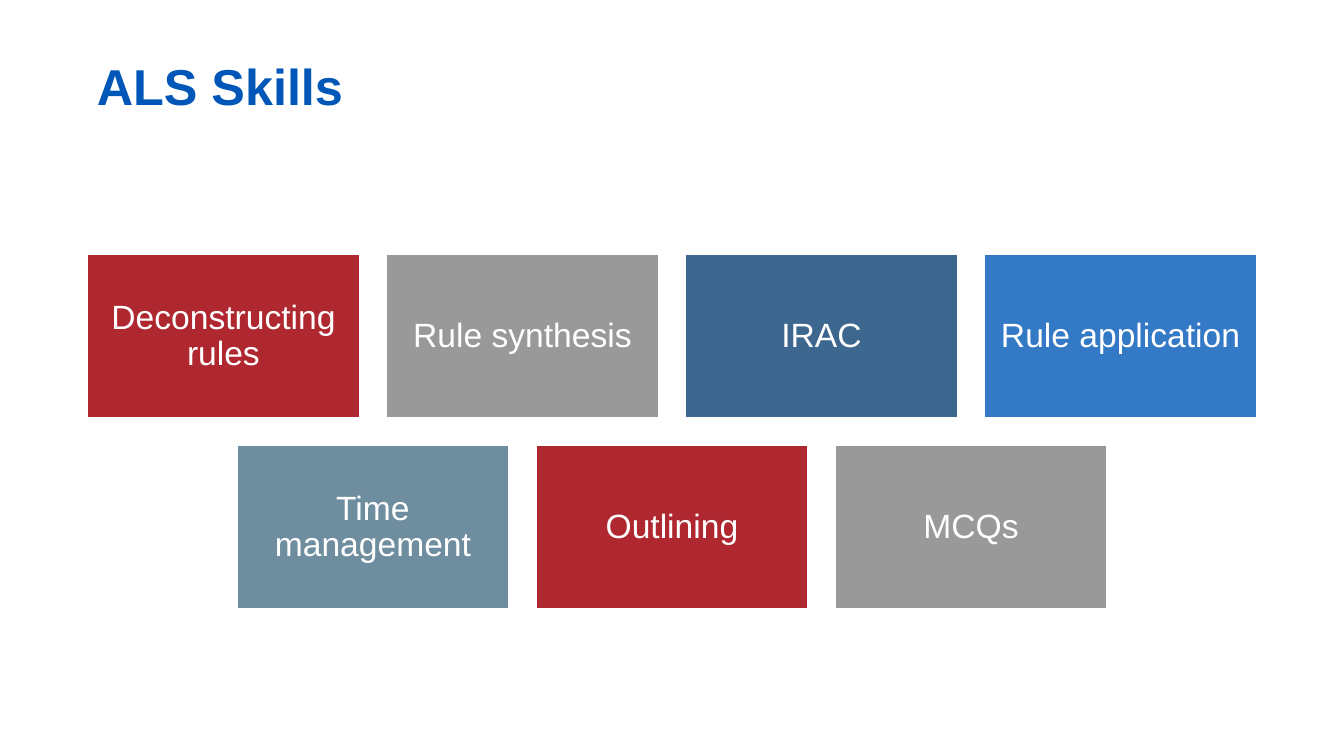
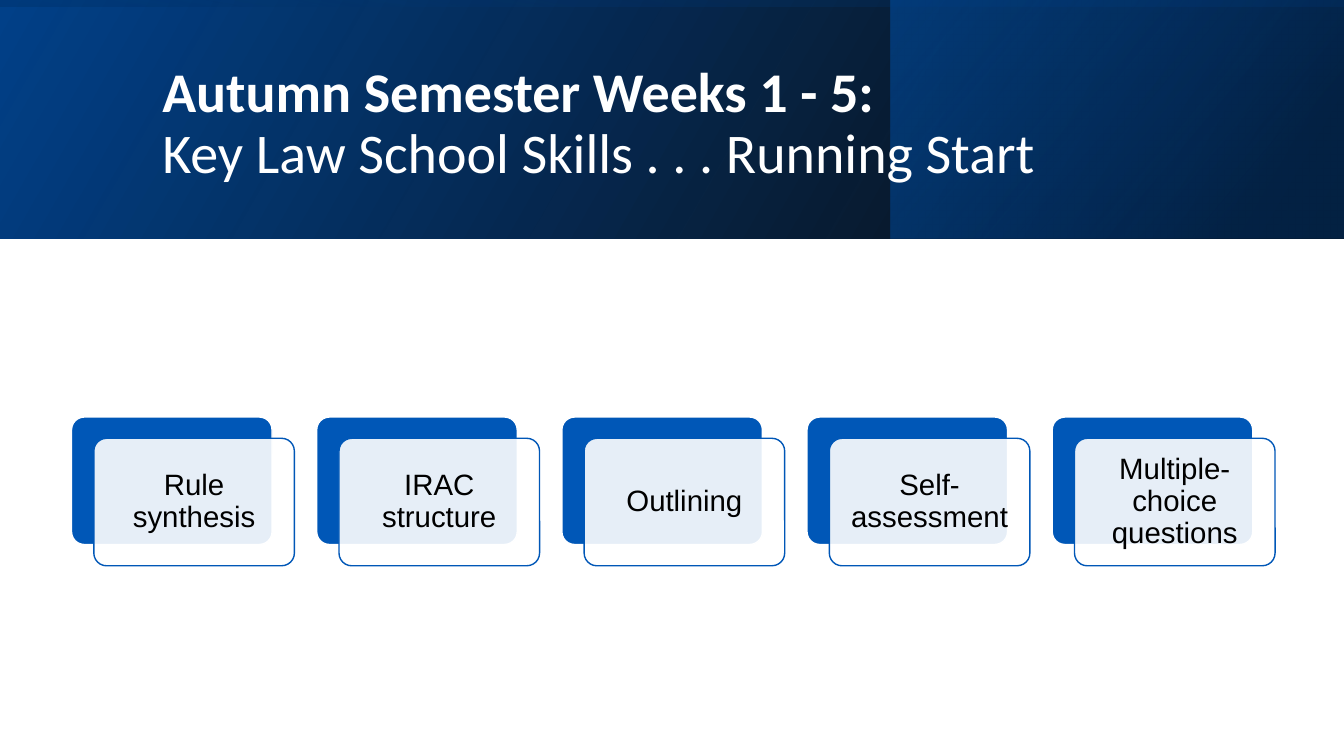
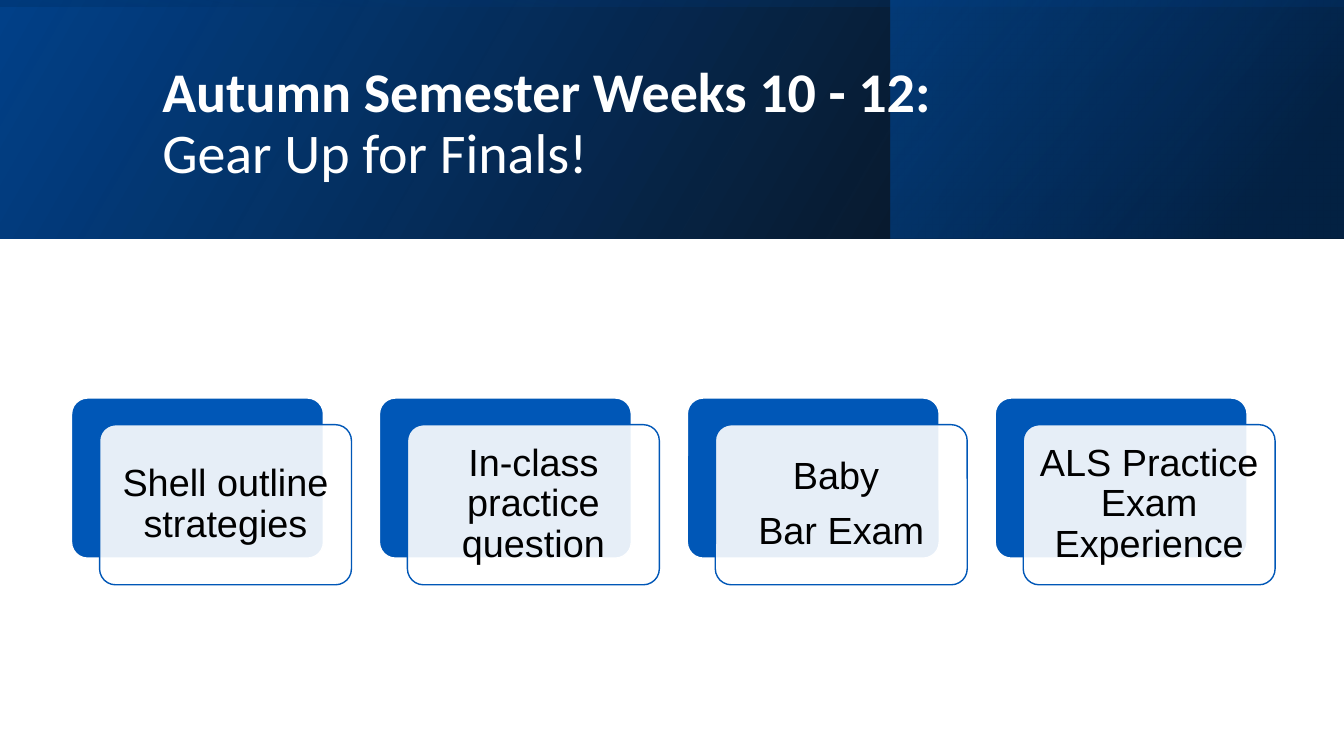
from lxml.etree import SubElement
from pptx import Presentation
from pptx.dml.color import RGBColor
from pptx.enum.shapes import MSO_SHAPE
from pptx.enum.text import MSO_ANCHOR, MSO_AUTO_SIZE, PP_ALIGN
from pptx.oxml.ns import qn
from pptx.util import Inches, Pt

COLORS = {
    "white": "FFFFFF", "black": "000000", "blue": "0057B7", "navy": "004189",
    "deep": "002B5C", "red": "AF272F", "gray": "999999", "steel": "3E6790",
    "sky": "3379C5", "slate": "6E8D9E",
}


def rgb(name):
    return RGBColor.from_string(COLORS[name])


class Deck:
    """Style and current slide; lengths are percent of slide width and height."""
    body_font, band_font = "Arial", "Calibri"
    band_height = 31.6

    def __init__(self):
        self.prs = Presentation()
        self.prs.slide_width, self.prs.slide_height = Inches(13.333), Inches(7.5)

    def new_slide(self):
        self.s = self.prs.slides.add_slide(self.prs.slide_layouts[5])

    def box(self, left, top, width, height):
        w, h = self.prs.slide_width / 100, self.prs.slide_height / 100
        return int(left * w), int(top * h), int(width * w), int(height * h)

    def shape(self, kind, box, line=None):
        sp = self.s.shapes.add_shape(kind, *self.box(*box))
        sp.shadow.inherit = False
        if line:
            sp.line.color.rgb, sp.line.width = rgb(line), Pt(1)
        else:
            sp.line.fill.background()
        return sp

    def set_alpha(self, sp, *percents):
        """Make the fill's colours, in order, this opaque."""
        for clr, percent in zip(sp.element.spPr.iter(qn("a:srgbClr")), percents):
            SubElement(clr, qn("a:alpha")).set("val", str(percent * 1000))

    def label(self, sp, text, size, color):
        tf = sp.text_frame
        tf.word_wrap, tf.vertical_anchor = True, MSO_ANCHOR.MIDDLE
        tf.margin_left = tf.margin_right = tf.margin_top = tf.margin_bottom = Pt(size * 0.3)
        tf.text = text
        for p in tf.paragraphs:
            p.alignment, p.line_spacing, p.space_after = PP_ALIGN.CENTER, 0.9, Pt(size * 0.35)
            p.font.size, p.font.name, p.font.color.rgb = Pt(size), self.body_font, rgb(color)

    def title(self, box, lines, size, font, color, anchor):
        """First line is bold, the others are regular."""
        sp = self.s.shapes.title
        sp.left, sp.top, sp.width, sp.height = self.box(*box)
        tf = sp.text_frame
        tf.word_wrap, tf.auto_size, tf.vertical_anchor = True, MSO_AUTO_SIZE.NONE, anchor
        p = tf.paragraphs[0]
        p.alignment, p.line_spacing = PP_ALIGN.LEFT, 0.9
        p.font.size, p.font.name, p.font.color.rgb = Pt(size), font, rgb(color)
        for i, line in enumerate(lines):
            if i:
                p.add_line_break()
            r = p.add_run()
            r.text, r.font.bold = line, i == 0
        sp.element.getparent().append(sp.element)  # in front of the band

    def panel(self, left, angle, stops, turned=False):
        """Mirrored gradient panel from left to the slide's right edge."""
        sp = self.shape(MSO_SHAPE.RECTANGLE, (left, 0, 100 - left, self.band_height))
        if turned:
            shift = (sp.width - sp.height) // 2
            sp.left, sp.top = sp.left + shift, sp.top - shift
            sp.width, sp.height = sp.height, sp.width
            sp.rotation = 270
        sp.element.spPr.find(qn("a:xfrm")).set("flipH", "1")
        sp.fill.gradient()
        sp.fill.gradient_angle = 360 - angle
        for stop, (position, color, _) in zip(sp.fill.gradient_stops, stops):
            stop.position, stop.color.rgb = position, rgb(color)
        self.set_alpha(sp, *(alpha for _, _, alpha in stops))

    def band(self, *lines):
        self.panel(0, 330, [(0, "black", 96), (1, "navy", 100)])
        self.panel(66.3, 320, [(0.19, "deep", 68), (1, "blue", 48)])
        self.panel(0, 350, [(0.23, "navy", 16), (0.99, "black", 45)], turned=True)
        self.title((11.33, 5.07, 79.73, 22.93), lines, 40, self.band_font, "white",
                   MSO_ANCHOR.MIDDLE)

    def tiles(self, top, rows, size=24):
        """Centred rows of (text, colour) tiles."""
        width, height, gap_x, gap_y = 20.25, 21.6, 2, 3.65
        for row, tiles in enumerate(rows):
            left = (100 - len(tiles) * (width + gap_x) + gap_x) / 2
            for col, (text, color) in enumerate(tiles):
                sp = self.shape(MSO_SHAPE.RECTANGLE,
                                (left + col * (width + gap_x), top + row * (height + gap_y),
                                 width, height), "white")
                sp.fill.solid()
                sp.fill.fore_color.rgb = rgb(color)
                self.label(sp, text, size, "white")

    def cards(self, texts, size, span=89.55, middle=65):
        """One row of blue cards, each with a translucent card shifted over it."""
        width = span * 9 / (11 * len(texts) - 1)
        height = width * 1.13
        dx, dy = width / 9, height / 6
        left, top = (100 - span) / 2 + 0.1, middle - (height + dy) / 2
        for i, text in enumerate(texts):
            x = left + i * (width + 2 * dx)
            back = self.shape(MSO_SHAPE.ROUNDED_RECTANGLE, (x, top, width, height), "white")
            front = self.shape(MSO_SHAPE.ROUNDED_RECTANGLE,
                               (x + dx, top + dy, width, height), "blue")
            for sp, color in ((back, "blue"), (front, "white")):
                sp.adjustments[0] = 0.1
                sp.fill.solid()
                sp.fill.fore_color.rgb = rgb(color)
            self.set_alpha(front, 90)
            self.label(front, text, size, "black")


def main():
    deck = Deck()

    deck.new_slide()
    deck.title((6.45, 7.47, 87.1, 14.5), ["ALS Skills"], 36, deck.body_font, "blue",
               MSO_ANCHOR.TOP)
    deck.tiles(33.7, [
        [("Deconstructing rules", "red"), ("Rule synthesis", "gray"),
         ("IRAC", "steel"), ("Rule application", "sky")],
        [("Time management", "slate"), ("Outlining", "red"), ("MCQs", "gray")],
    ])

    deck.new_slide()
    deck.band("Autumn Semester Weeks 1 - 5:", "Key Law School Skills . . . Running Start")
    deck.cards(["Rule synthesis", "IRAC structure", "Outlining", "Self-assessment",
                "Multiple-choice questions"], 21)

    deck.new_slide()
    deck.band("Autumn Semester Weeks 10 - 12:", "Gear Up for Finals!")
    deck.cards(["Shell outline strategies", "In-class practice question",
                "Baby \nBar Exam", "ALS Practice Exam Experience"], 27)

    deck.prs.save("out.pptx")


if __name__ == "__main__":
    main()
